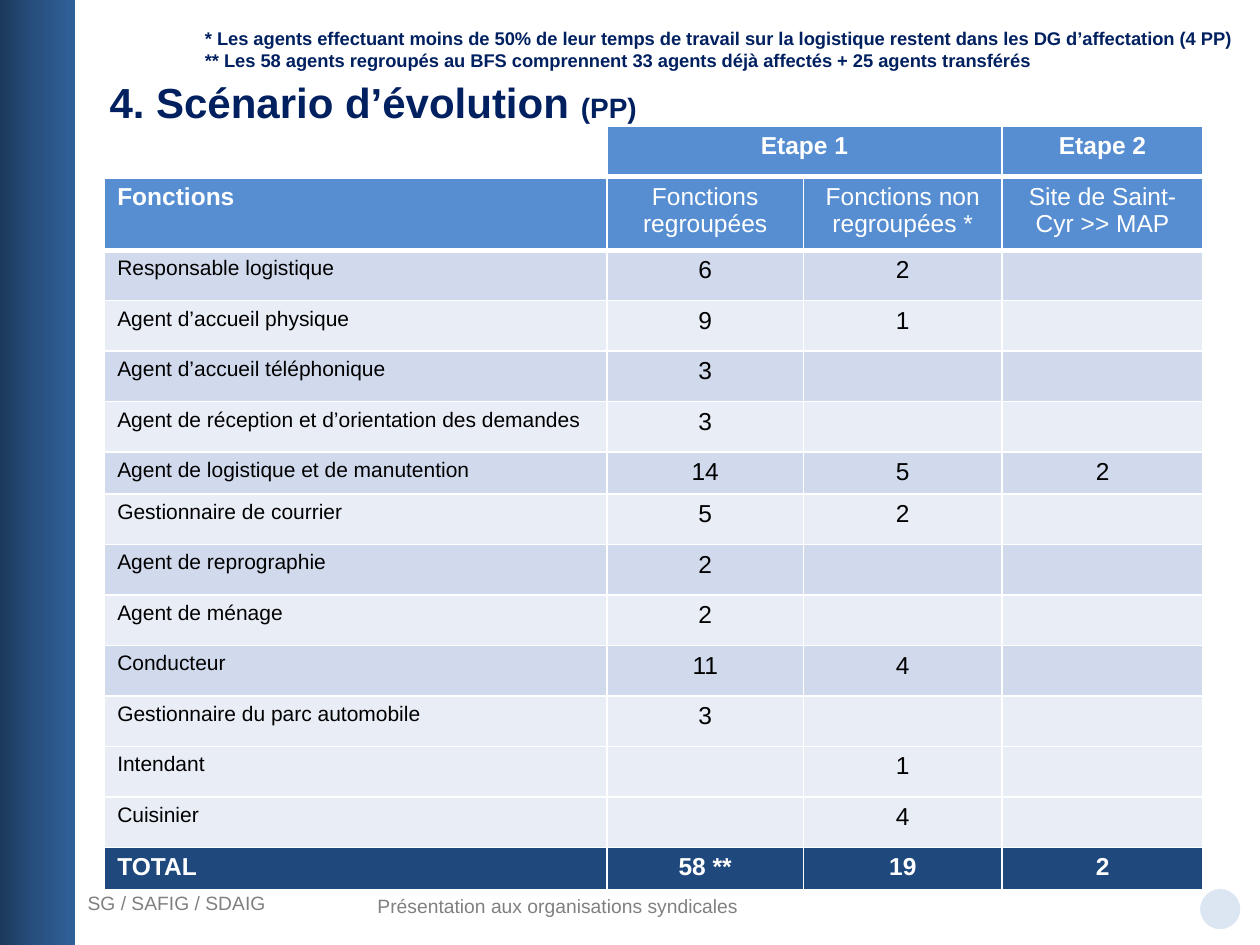
import pptx
import pptx.chart.data
import pptx.dml.color
import pptx.enum.shapes
import pptx.enum.text
import pptx.oxml
import pptx.oxml.ns
import pptx.util
import copy

Pt = pptx.util.Pt
RGBColor = pptx.dml.color.RGBColor
Shape = pptx.enum.shapes.MSO_SHAPE
Align = pptx.enum.text.PP_ALIGN

WHITE = RGBColor(0xFF, 0xFF, 0xFF)
BLACK = RGBColor(0, 0, 0)
NAVY = RGBColor(0x00, 0x20, 0x60)
GREY = RGBColor(0x80, 0x80, 0x80)
PALE = RGBColor(0xDC, 0xE6, 0xF2)
HEADER = RGBColor(0x57, 0x8E, 0xD1)
DARK_BAND = RGBColor(0xD1, 0xDA, 0xED)
LIGHT_BAND = RGBColor(0xE9, 0xED, 0xF6)
TOTAL = RGBColor(0x1F, 0x49, 0x7D)
SIDEBAR = [RGBColor(0x1C, 0x39, 0x5B), RGBColor(0x28, 0x51, 0x81), RGBColor(0x30, 0x60, 0x99)]

HEADINGS = [
    ["", "Etape 1", "", "Etape 2"],
    ["Fonctions", "Fonctions regroupées", "Fonctions non regroupées *", "Site de Saint-Cyr >> MAP"],
]
STAFF = [
    ["Responsable logistique", "6", "2", ""],
    ["Agent d’accueil physique", "9", "1", ""],
    ["Agent d’accueil téléphonique", "3", "", ""],
    ["Agent de réception et d’orientation des demandes", "3", "", ""],
    ["Agent de logistique et de manutention", "14", "5", "2"],
    ["Gestionnaire de courrier", "5", "2", ""],
    ["Agent de reprographie", "2", "", ""],
    ["Agent de ménage", "2", "", ""],
    ["Conducteur", "11", "4", ""],
    ["Gestionnaire du parc automobile", "3", "", ""],
    ["Intendant", "", "1", ""],
    ["Cuisinier", "", "4", ""],
]
TOTALS = ["TOTAL", "58 **", "19", "2"]
COLUMN_WIDTHS = [287, 112.4, 113.4, 115]
ROW_HEIGHT, SHORT_ROW, HEADING_ROW = 28.2, 23.6, 42.2
THIN, THICK = 0.96, 3


class SlideBuilder:
    font_name = "Arial"

    def __init__(self, page):
        self.page = page

    def style(self, span, size, color, bold=False):
        span.font.name = self.font_name
        span.font.size = Pt(size)
        span.font.bold = bold
        span.font.color.rgb = color

    def shape(self, kind, left, top, width, height):
        shape = self.page.shapes.add_shape(kind, Pt(left), Pt(top), Pt(width), Pt(height))
        shape.shadow.inherit = False
        return shape

    def sidebar(self, left, top, width, height, colors):
        bar = self.shape(Shape.RECTANGLE, left, top, width, height)
        bar.line.fill.background()
        bar.fill.gradient()
        bar.fill.gradient_angle = 0
        stops = bar._element.spPr.find(".//" + pptx.oxml.ns.qn("a:gsLst"))
        stops.append(copy.deepcopy(stops[-1]))
        for index, (stop, color) in enumerate(zip(bar.fill.gradient_stops, colors)):
            stop.position = index / (len(colors) - 1)
            stop.color.rgb = color

    def disc(self, left, top, size, color):
        disc = self.shape(Shape.OVAL, left, top, size, size)
        disc.fill.solid()
        disc.fill.fore_color.rgb = color
        disc.line.color.rgb = WHITE
        disc.line.width = Pt(0.75)

    def text(self, left, top, width, height, content, size, color, bold=False, wrap=True):
        box = self.page.shapes.add_textbox(Pt(left), Pt(top), Pt(width), Pt(height))
        box.text_frame.word_wrap = wrap
        box.text_frame.text = content
        for para in box.text_frame.paragraphs:
            for span in para.runs:
                self.style(span, size, color, bold)
        return box

    def borders(self, cell, top, bottom):
        properties = cell._tc.get_or_add_tcPr()
        edges = [("lnL", THIN), ("lnR", THIN), ("lnT", top), ("lnB", bottom)]
        for index, (edge, width) in enumerate(edges):
            properties.insert(index, pptx.oxml.parse_xml(
                f'<a:{edge} {pptx.oxml.ns.nsdecls("a")} w="{int(Pt(width))}"><a:solidFill>'
                f'<a:srgbClr val="{WHITE}"/></a:solidFill></a:{edge}>'))

    def cell(self, cell, content, fill, size, color, bold, align, top, bottom):
        cell.fill.solid()
        cell.fill.fore_color.rgb = fill
        self.borders(cell, top, bottom)
        if content:
            cell.text_frame.text = content
            para = cell.text_frame.paragraphs[0]
            para.alignment = align
            self.style(para.runs[0], size, color, bold)

    def staff_table(self, left, top):
        rows = HEADINGS + [*STAFF, TOTALS]
        last = len(rows) - 1
        heights = [ROW_HEIGHT] * len(rows)
        heights[1] = HEADING_ROW
        heights[6] = heights[last] = SHORT_ROW
        frame = self.page.shapes.add_table(
            len(rows), len(COLUMN_WIDTHS), Pt(left), Pt(top),
            Pt(sum(COLUMN_WIDTHS)), Pt(sum(heights)))
        table = frame.table
        for column, width in zip(table.columns, COLUMN_WIDTHS):
            column.width = Pt(width)
        for row, height in zip(table.rows, heights):
            row.height = Pt(height)
        for r, values in enumerate(rows):
            heading, total = r < 2, r == last
            if heading:
                fill = HEADER
            elif total:
                fill = TOTAL
            else:
                fill = DARK_BAND if r % 2 == 0 and r < 12 else LIGHT_BAND
            for c, value in enumerate(values):
                self.cell(
                    table.cell(r, c), value,
                    fill=WHITE if r == c == 0 else fill,
                    size=12 if c == 0 and not (heading or total) else 14,
                    color=WHITE if heading or total else BLACK,
                    bold=r == 0 or total or (r == 1 and c == 0),
                    align=Align.CENTER if c else Align.LEFT,
                    top=THICK if r in (1, 2) else THIN,
                    bottom=THICK if heading else THIN)
        table.cell(0, 1).merge(table.cell(0, 2))


def main():
    deck = pptx.Presentation()
    deck.slide_width, deck.slide_height = Pt(720), Pt(540)
    builder = SlideBuilder(deck.slides.add_slide(deck.slide_layouts[6]))

    builder.disc(685.4, 507.6, 23.8, PALE)
    builder.sidebar(0, 0, 43, 540, SIDEBAR)
    builder.text(43, 506, 155, 20, "SG / SAFIG / SDAIG", 11, GREY)
    builder.text(208.6, 507.5, 231, 20, "Présentation aux organisations syndicales", 11, GREY)

    title = builder.text(55.5, 40.3, 636, 48, "4. Scénario d’évolution ", 24, NAVY, bold=True)
    unit = title.text_frame.paragraphs[0].add_run()
    unit.text = "(PP)"
    builder.style(unit, 16, NAVY, bold=True)

    builder.staff_table(59.8, 72)
    builder.text(
        110, 12.2, 604, 39,
        "* Les agents effectuant moins de 50% de leur temps de travail sur la logistique "
        "restent dans les DG d’affectation (4 PP)\n"
        "** Les 58 agents regroupés au BFS comprennent 33 agents déjà affectés "
        "+ 25 agents transférés",
        10.5, NAVY, bold=True, wrap=False)
    deck.save("out.pptx")


if __name__ == "__main__":
    main()
